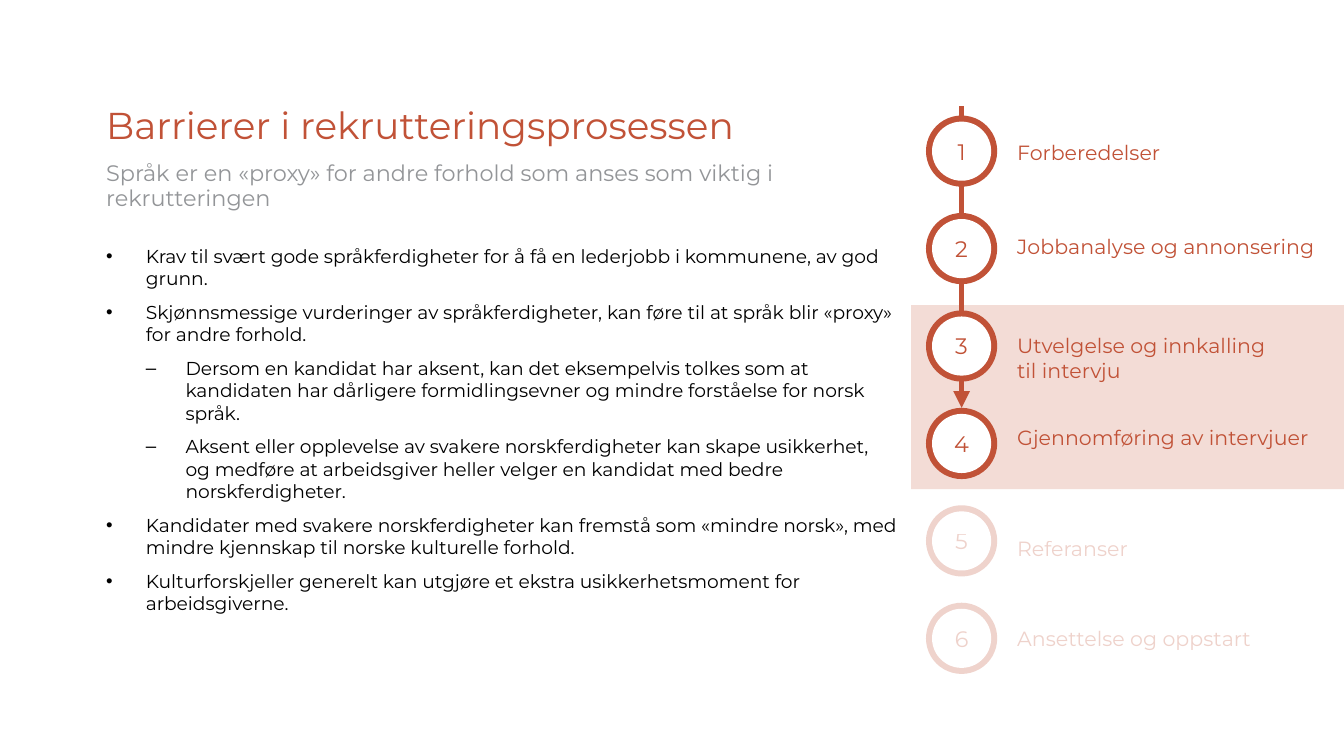
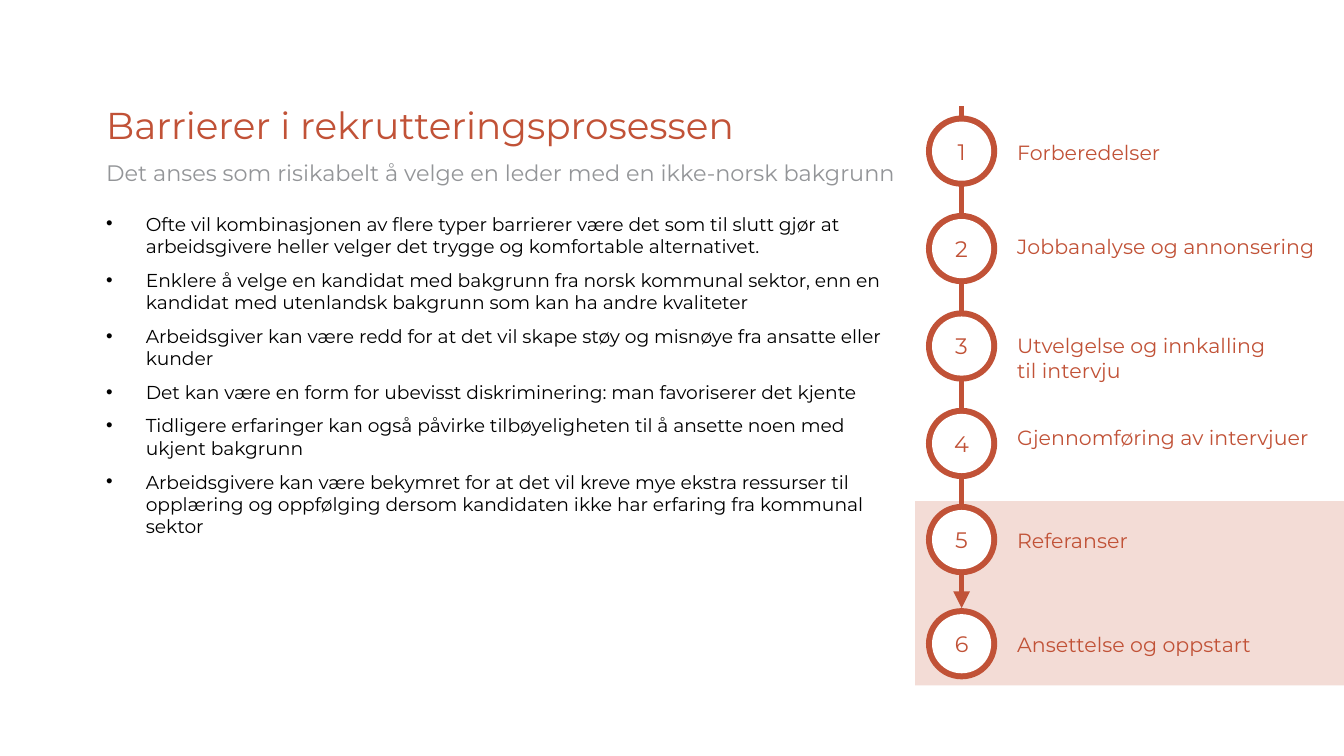
import lxml.etree
import pptx
import pptx.dml.color
import pptx.enum.shapes
import pptx.enum.text
import pptx.oxml.ns
import pptx.util

COLS, ROWS = 100, 56.25
WIDE, HIGH = pptx.util.Inches(10), pptx.util.Inches(5.625)
HUES = {"rust": "C15237", "blush": "F3DCD6", "gray": "939598",
        "black": "000000", "white": "FFFFFF"}
FONT = "Montserrat"
SHAPES = pptx.enum.shapes.MSO_SHAPE
ALIGN = pptx.enum.text.PP_ALIGN
ANCHOR = pptx.enum.text.MSO_ANCHOR
STEPS = ["Forberedelser", "Jobbanalyse og annonsering",
         "Utvelgelse og innkalling \ntil intervju",
         "Gjennomføring av intervjuer", "Referanser", "Ansettelse og oppstart"]
TITLE = "Barrierer i rekrutteringsprosessen"
RING, DISC, PITCH = 5.3, 4.4, 7.25
HEAD = (7.9, 7.3, 88.2, 9.5)
RAIL = (68.9, 7.9, 31.1, 43)

PAGES = [
    {"sub": "Språk er en «proxy» for andre forhold som anses som viktig i rekrutteringen",
     "wide": 59.9, "body": (7.9, 18.2, 58.8, 30.3),
     "band": (67.8, 22.7, 32.2, 13.7), "last": 4,
     "drift": [0] * 6, "drop": [1.3, 1.1, 1.2, 0.8, 1.8, 1.2],
     "items": [
         (0, "Krav til svært gode språkferdigheter for å få en lederjobb i kommunene, av god grunn."),
         (0, "Skjønnsmessige vurderinger av språkferdigheter, kan føre til at språk blir «proxy» for andre forhold."),
         (1, "Dersom en kandidat har aksent, kan det eksempelvis tolkes som at kandidaten har dårligere formidlingsevner og mindre forståelse for norsk språk."),
         (1, "Aksent eller opplevelse av svakere norskferdigheter kan skape usikkerhet, og medføre at arbeidsgiver heller velger en kandidat med bedre norskferdigheter."),
         (0, "Kandidater med svakere norskferdigheter kan fremstå som «mindre norsk», med mindre kjennskap til norske kulturelle forhold."),
         (0, "Kulturforskjeller generelt kan utgjøre et ekstra usikkerhetsmoment for arbeidsgiverne."),
     ]},
    {"sub": "Det anses som risikabelt å velge en leder med en ikke-norsk bakgrunn",
     "wide": 88.2, "body": (7.9, 15.8, 58.8, 31.9),
     "band": (68.1, 37.3, 31.9, 13.7), "last": 6,
     "drift": [0, 0, 0, 0, -0.1, 0.4], "drop": [1.3, 1.1, 1.2, 0.8, 1.3, 1.3],
     "items": [
         (0, "Ofte vil kombinasjonen av flere typer barrierer være det som til slutt gjør at arbeidsgivere heller velger det trygge og komfortable alternativet."),
         (0, "Enklere å velge en kandidat med bakgrunn fra norsk kommunal sektor, enn en kandidat med utenlandsk bakgrunn som kan ha andre kvaliteter"),
         (0, "Arbeidsgiver kan være redd for at det vil skape støy og misnøye fra ansatte eller kunder"),
         (0, "Det kan være en form for ubevisst diskriminering: man favoriserer det kjente"),
         (0, "Tidligere erfaringer kan også påvirke tilbøyeligheten til å ansette noen med ukjent bakgrunn"),
         (0, "Arbeidsgivere kan være bekymret for at det vil kreve mye ekstra ressurser til opplæring og oppfølging dersom kandidaten ikke har erfaring fra kommunal sektor"),
     ]},
]


def place(box):
    """Turn grid columns and rows into slide lengths."""
    units = (WIDE / COLS, HIGH / ROWS) * 2
    return [round(part * unit) for part, unit in zip(box, units)]


def add(parent, tag, **attrs):
    """Append a drawing element with attributes."""
    return lxml.etree.SubElement(parent, pptx.oxml.ns.qn(tag), attrs)


def color(name):
    """Look up a named colour."""
    return pptx.dml.color.RGBColor.from_string(HUES[name])


def fade(node):
    """Make every colour inside a node a quarter opaque."""
    for hue in node.iter(pptx.oxml.ns.qn("a:srgbClr")):
        add(hue, "a:alpha", val="25000")


def write(para, text, size=11, hue="rust", align=None, space=None, gap=None,
          pale=False):
    """Fill a paragraph with formatted text."""
    para.text = text
    for run in para.runs:
        run.font.size = pptx.util.Pt(size)
        run.font.name = FONT
        run.font.color.rgb = color(hue)
    if align is not None:
        para.alignment = align
    if space is not None:
        para.line_spacing = space
    if gap is not None:
        para.space_before = pptx.util.Pt(gap)
    if pale:
        fade(para._p)


def bare(frame):
    """Remove the insets of a text frame."""
    frame.margin_left = frame.margin_right = 0
    frame.margin_top = frame.margin_bottom = 0


def field(slide, box, inset=False):
    """Add a wrapping text box and return its frame."""
    frame = slide.shapes.add_textbox(*place(box)).text_frame
    frame.word_wrap = True
    if not inset:
        bare(frame)
    return frame


def solid(slide, kind, box, hue, pale=False):
    """Add a flat shape without outline."""
    shape = slide.shapes.add_shape(kind, *place(box))
    shape.shadow.inherit = False
    shape.fill.solid()
    shape.fill.fore_color.rgb = color(hue)
    shape.line.fill.background()
    if pale:
        fade(shape._element.spPr)
    return shape


def header(slide, box, sub, wide):
    """Place the title and the subtitle."""
    left, top, width, height = box
    frame = field(slide, (left, top, width, 4.3))
    write(frame.paragraphs[0], TITLE, size=20, space=pptx.util.Pt(26))
    frame = field(slide, (left, top + 4.8, wide, height - 4.8))
    write(frame.paragraphs[0], sub, size=12, hue="gray", space=0.9)


def bullets(slide, box, items):
    """Place the list on two levels."""
    frame = field(slide, box)
    for index, (level, text) in enumerate(items):
        para = frame.add_paragraph() if index else frame.paragraphs[0]
        props = para._p.get_or_add_pPr()
        step = pptx.util.Inches(0.295)
        props.set("marL", str(step * (level + 1)))
        props.set("indent", str(-step))
        add(props, "a:buFont", typeface="Arial")
        add(props, "a:buChar", char="•–"[level])
        para.level = level
        write(para, text, size=10, hue="black", gap=6 if index else None)


def arrow(slide, start):
    """Start the vertical arrow behind the rings."""
    x, y = place(start)
    line = slide.shapes.add_connector(
        pptx.enum.shapes.MSO_CONNECTOR.STRAIGHT, x, y, x, y)
    line.line.color.rgb = color("rust")
    line.line.width = pptx.util.Pt(3)
    add(line.line._get_or_add_ln(), "a:tailEnd", type="triangle")
    add(line._element.spPr, "a:effectLst")
    return line


def step(slide, box, number, text, drop, pale):
    """Place one numbered ring with its label and return the ring."""
    left, top, width, size = box
    rim = (size - DISC) / 2
    ring = solid(slide, SHAPES.OVAL, (left, top, size, size), "rust", pale)
    disc = solid(slide, SHAPES.OVAL, (left + rim, top + rim, DISC, DISC), "white")
    frame = disc.text_frame
    bare(frame)
    frame.word_wrap = False
    frame.vertical_anchor = ANCHOR.MIDDLE
    write(frame.paragraphs[0], str(number), size=12, align=ALIGN.CENTER, pale=pale)
    tall = 2.9 + 1.8 * text.count("\n")
    label = field(slide, (left + 5.8, top + drop, width - 5.8, tall), inset=True)
    label.auto_size = pptx.enum.text.MSO_AUTO_SIZE.SHAPE_TO_FIT_TEXT
    write(label.paragraphs[0], text, pale=pale)
    return ring


def rail(slide, box, page):
    """Place the process steps and the arrow to the current one."""
    left, top, width, _ = box
    solid(slide, SHAPES.RECTANGLE, page["band"], "blush")
    line = arrow(slide, (left + RING / 2, top))
    for index, text in enumerate(STEPS):
        number = index + 1
        y = top + 0.7 + PITCH * index + page["drift"][index]
        ring = step(slide, (left, y, width, RING), number, text,
                    page["drop"][index], number > page["last"])
        if number == page["last"]:
            line.end_connect(ring, 0)


def main():
    """Build both slides and save them."""
    deck = pptx.Presentation()
    deck.slide_width, deck.slide_height = WIDE, HIGH
    for page in PAGES:
        slide = deck.slides.add_slide(deck.slide_layouts[6])
        header(slide, HEAD, page["sub"], page["wide"])
        bullets(slide, page["body"], page["items"])
        rail(slide, RAIL, page)
    deck.save("out.pptx")


if __name__ == "__main__":
    main()
